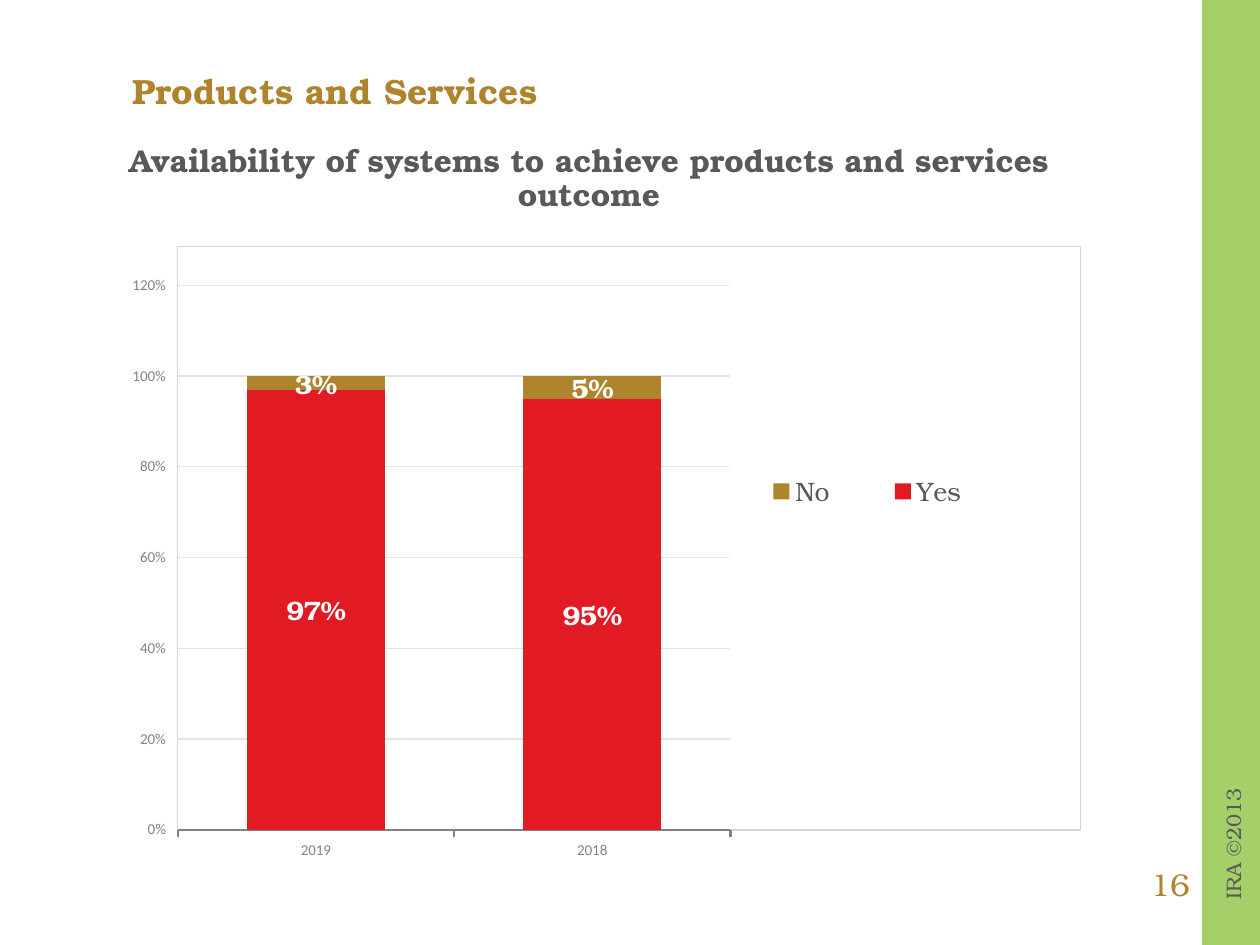
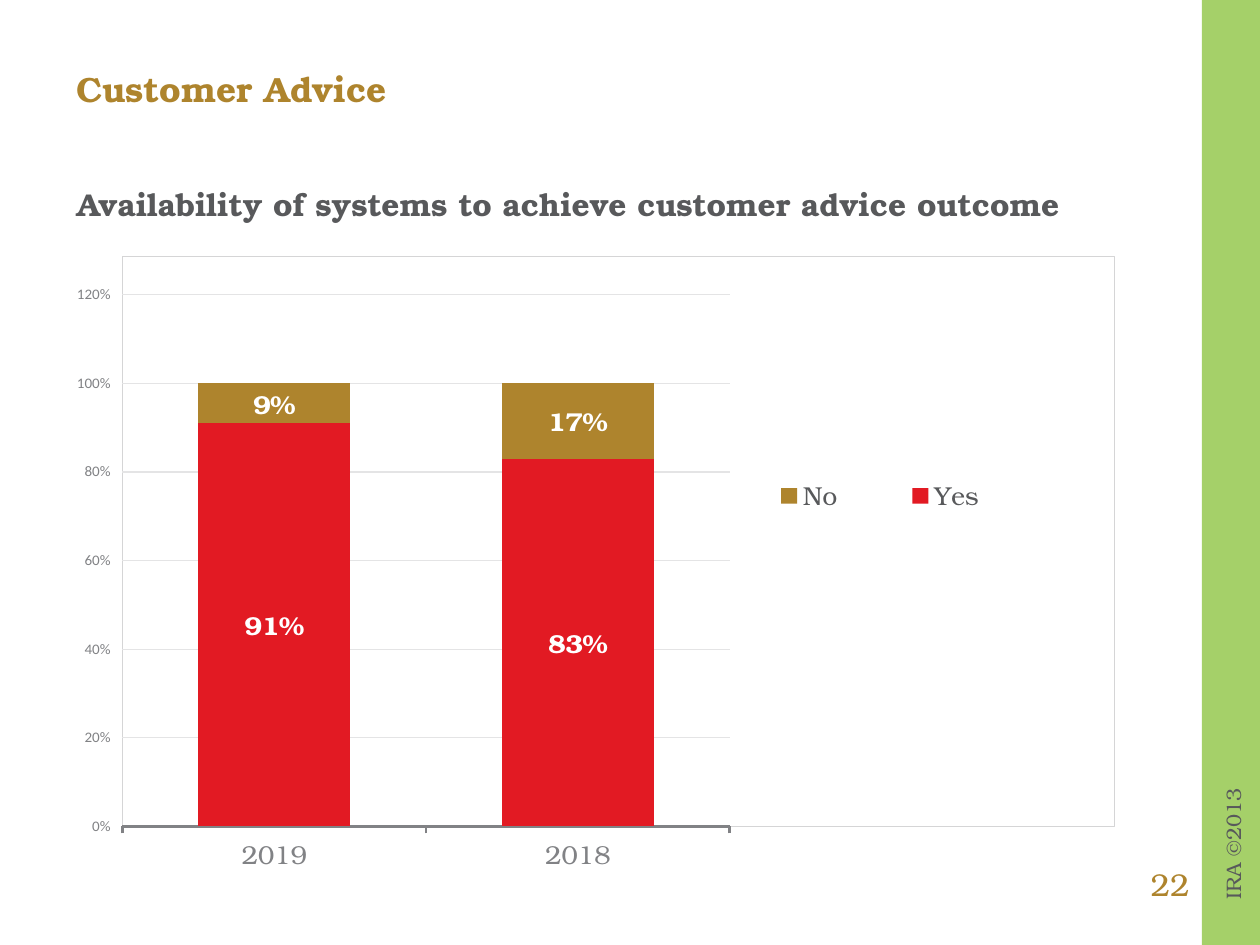
import pptx
import pptx.chart.data
import pptx.dml.color
import pptx.enum.chart
import pptx.enum.shapes
import pptx.enum.text
import pptx.oxml
import pptx.util

Cm, Pt = pptx.util.Cm, pptx.util.Pt
RGB = pptx.dml.color.RGBColor.from_string
ALIGN = pptx.enum.text.PP_ALIGN
XL = pptx.enum.chart

SERIF, SANS = "TeX Gyre Bonum", "Calibri"
COLORS = {"green": "A5D069", "gold": "AE842D", "red": "E21A23", "text": "58595B",
          "axis": "818285", "grid": "E4E4E5", "border": "D5D5D6", "white": "FFFFFF"}
SERIES_COLORS = {"Yes": "red", "No": "gold"}

# Boxes are left, top, width, height in cm
SLIDES = [
    {"number": "16", "title": "Products and Services", "title_box": (2.67, 1.5, 17.15, 0.76),
     "subtitle": "Availability of systems to achieve products and services outcome",
     "subtitle_box": (2.31, 2.92, 19.13, 1.4), "subtitle_align": ALIGN.CENTER,
     "chart_box": (2.67, 4.95, 19.13, 12.37), "year_font": (SANS, 9),
     "values": {"Yes": (0.97, 0.95), "No": (0.03, 0.05)}},
    {"number": "22", "title": "Customer Advice", "title_box": (1.55, 1.45, 17.15, 0.76),
     "subtitle": "Availability of systems to achieve customer advice outcome",
     "subtitle_box": (1.55, 3.81, 20.93, 0.69), "subtitle_align": ALIGN.LEFT,
     "chart_box": (1.55, 5.16, 20.93, 12.42), "year_font": (SERIF, 16),
     "values": {"Yes": (0.91, 0.83), "No": (0.09, 0.17)}},
]


def style(font, size, color, name=SERIF, bold=False):
    font.name, font.size, font.bold = name, Pt(size), bold
    font.color.rgb = RGB(COLORS[color])


def add_text(s, box, text, size, color, align=ALIGN.CENTER, heading=False):
    """Add one paragraph; headings are bold, tightly spaced and have no insets."""
    sp = s.shapes.add_textbox(*map(Cm, box))
    tf = sp.text_frame
    tf.word_wrap = True
    p = tf.paragraphs[0]
    p.text, p.alignment = text, align
    style(p.font, size, color, bold=heading)
    if heading:
        p.line_spacing = 0.9
        tf.margin_left = tf.margin_right = tf.margin_top = tf.margin_bottom = 0
    return sp


prs = pptx.Presentation()
prs.slide_width, prs.slide_height = Cm(25.4), Cm(19.05)

for page in SLIDES:
    s = prs.slides.add_slide(prs.slide_layouts[6])

    band = s.shapes.add_shape(pptx.enum.shapes.MSO_SHAPE.RECTANGLE,
                              Cm(24.23), 0, Cm(1.17), prs.slide_height)
    band.shadow.inherit = False
    band.fill.solid()
    band.fill.fore_color.rgb = RGB(COLORS["green"])
    band.line.fill.background()
    add_text(s, (23.32, 16.64, 3.07, 0.76), "IRA ©2013", 12, "text").rotation = 270
    add_text(s, (22.83, 17.32, 1.52, 1.02), page["number"], 18, "gold")

    title = add_text(s, page["title_box"], page["title"], 20, "gold", ALIGN.LEFT, True)
    title.text_frame.vertical_anchor = pptx.enum.text.MSO_ANCHOR.MIDDLE
    add_text(s, page["subtitle_box"], page["subtitle"], 18, "text",
             page["subtitle_align"], True)

    data = pptx.chart.data.CategoryChartData(number_format="0%")
    data.categories = ["2019", "2018"]
    for name, values in page["values"].items():
        data.add_series(name, values)
    chart = s.shapes.add_chart(XL.XL_CHART_TYPE.COLUMN_STACKED,
                               *map(Cm, page["chart_box"]), data).chart
    chart.has_title = False
    style(chart.font, 10, "text", SANS)

    plot = chart.plots[0]
    plot.gap_width, plot.overlap, plot.vary_by_categories = 100, 100, False
    for series in plot.series:
        series.format.fill.solid()
        series.format.fill.fore_color.rgb = RGB(COLORS[SERIES_COLORS[series.name]])
        labels = series.data_labels
        labels.show_value = True
        labels.number_format, labels.number_format_is_linked = "0%", False
        labels.position = XL.XL_LABEL_POSITION.CENTER
        style(labels.font, 16, "white", bold=True)

    years, shares = chart.category_axis, chart.value_axis
    years.major_tick_mark = shares.major_tick_mark = XL.XL_TICK_MARK.OUTSIDE
    year_name, year_size = page["year_font"]
    style(years.tick_labels.font, year_size, "axis", year_name)
    years.format.line.color.rgb = RGB(COLORS["axis"])
    years.format.line.width = Pt(1.5)
    style(shares.tick_labels.font, 9, "axis", SANS)
    shares.tick_labels.number_format = "0%"
    shares.tick_labels.number_format_is_linked = False
    shares.minimum_scale, shares.maximum_scale, shares.major_unit = 0, 1.2, 0.2
    shares.format.line.fill.background()
    grid = shares.major_gridlines.format.line
    grid.color.rgb, grid.width = RGB(COLORS["grid"]), Pt(0.75)

    chart.has_legend = True
    legend = chart.legend
    legend.position = XL.XL_LEGEND_POSITION.RIGHT
    legend.include_in_layout = False
    style(legend.font, 16, "text")

    # Fixed places for the plot and the legend, as fractions of the chart
    plot_area = chart._chartSpace.chart.plotArea
    for old in plot_area.xpath("c:layout"):
        plot_area.remove(old)
    for parent, index, target, places in (
            (plot_area, 0, '<c:layoutTarget val="inner"/>', (0, 0.067, 0.612, 0.933)),
            (legend._element, 1, "", (0.597, 0.36, 0.333, 0.12))):
        for old in parent.xpath("c:layout"):
            parent.remove(old)
        modes = '<c:xMode val="edge"/><c:yMode val="edge"/>'
        sizes = "".join(f'<c:{key} val="{value}"/>' for key, value in zip("xywh", places))
        parent.insert(index, pptx.oxml.parse_xml(
            '<c:layout xmlns:c="http://schemas.openxmlformats.org/drawingml/2006/chart">'
            f"<c:manualLayout>{target}{modes}{sizes}</c:manualLayout></c:layout>"))

    # Border around the whole chart
    chart._chartSpace.chart.addnext(pptx.oxml.parse_xml(
        '<c:spPr xmlns:c="http://schemas.openxmlformats.org/drawingml/2006/chart" '
        'xmlns:a="http://schemas.openxmlformats.org/drawingml/2006/main"><a:noFill/>'
        f'<a:ln w="{Pt(0.75)}"><a:solidFill><a:srgbClr val="{COLORS["border"]}"/>'
        "</a:solidFill></a:ln></c:spPr>"))

prs.save("out.pptx")
